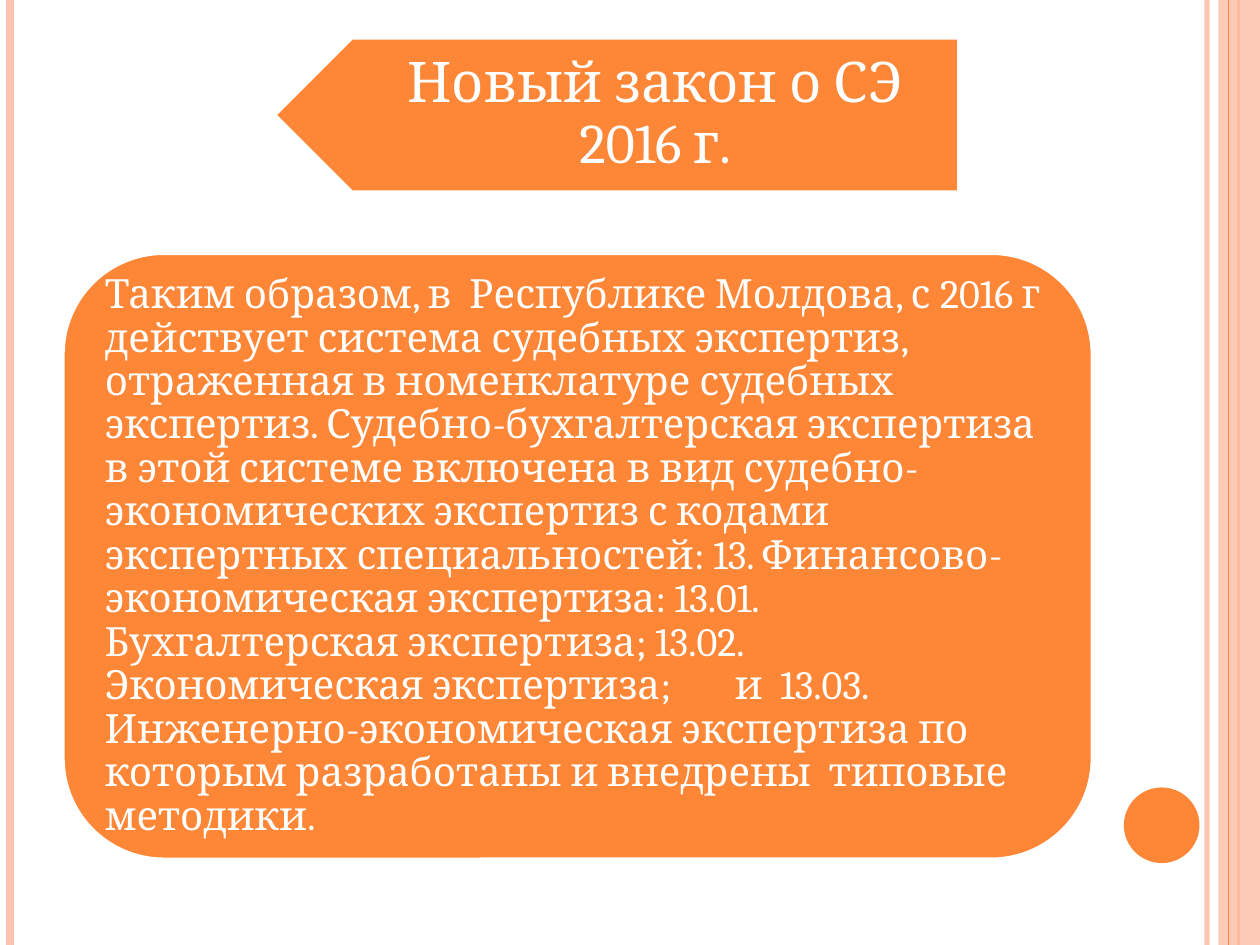
"""Build the slide on the 2016 forensic examination law."""
from dataclasses import dataclass
from typing import Any, Optional

from pptx import Presentation
from pptx import util as u
from pptx.dml import color
from pptx.enum import shapes, text
from pptx.oxml import ns, xmlchemy

WIDE, HIGH = u.Inches(10), u.Inches(7.5)
COLS, ROWS = 100, 75


@dataclass(frozen=True)
class Theme:
    """Colours, font and type sizes."""
    main: str = "FE8637"
    pale: str = "FEC3AE"
    white: str = "FFFFFF"
    font: str = "Cambria"
    head: float = 32
    body: float = 23


@dataclass(frozen=True)
class Box:
    """An area in grid columns and rows."""
    col: float
    row: float
    wide: float
    high: float

    def place(self) -> tuple[int, ...]:
        """Return the area in slide units."""
        return (across(self.col), down(self.row),
                across(self.wide), down(self.high))


@dataclass(frozen=True)
class Rule:
    """A full-height line."""
    col: float
    tone: str
    width: float
    alpha: int = 100


@dataclass(frozen=True)
class Form:
    """A filled preset shape."""
    kind: Any
    box: Box
    tone: str
    edge: Optional[str] = None
    turn: float = 0
    alpha: int = 100


@dataclass(frozen=True)
class Copy:
    """A paragraph with its size, alignment and insets in inches."""
    words: str
    size: float
    align: Any
    sides: tuple[float, float, float, float]


LOOK = Theme()
UNDER = (Rule(95.8, LOOK.pale, 3, 93), Rule(0.8, LOOK.pale, 4.5),
         Rule(98.3, LOOK.main, 1.5))
BAND = Form(shapes.MSO_SHAPE.RECTANGLE, Box(96.7, 0, 3.3, ROWS), LOOK.pale, alpha=87)
OVER = Rule(97.5, LOOK.main, 0.75)
DOT = Form(shapes.MSO_SHAPE.OVAL, Box(89.2, 62.5, 6, 6), LOOK.main)
ARROW = Form(shapes.MSO_SHAPE.PENTAGON, Box(21.8, 3, 54.3, 12.25), LOOK.main, LOOK.white, 180)
PANEL = Form(shapes.MSO_SHAPE.ROUNDED_RECTANGLE, Box(5, 20.1, 81.7, 48.1), LOOK.main, LOOK.white)
TITLE = Box(24.9, 3, 51.2, 12.25)
HEAD = Copy("Новый закон о СЭ 2016 г.", LOOK.head, text.PP_ALIGN.CENTER,
            (0.55, 0.13, 0.25, 0.13))
BODY = Copy(
    "Таким образом, в  Республике Молдова, с 2016 г действует система "
    "судебных экспертиз, отраженная в номенклатуре судебных экспертиз. "
    "Судебно-бухгалтерская экспертиза в этой системе включена в вид "
    "судебно-экономических экспертиз с кодами экспертных специальностей: "
    "13. Финансово-экономическая экспертиза: 13.01. Бухгалтерская экспертиза; "
    "13.02. Экономическая экспертиза; \tи  13.03. Инженерно-экономическая "
    "экспертиза по которым разработаны и внедрены  типовые методики.",
    LOOK.body, text.PP_ALIGN.LEFT, (0.1, 0.1, 0.1, 0.1))


def across(cols: float) -> int:
    """Turn columns into slide units."""
    return round(WIDE * cols / COLS)


def down(rows: float) -> int:
    """Turn rows into slide units."""
    return round(HIGH * rows / ROWS)


def apply(item: Any, vals: dict[str, Any]) -> None:
    """Set each named attribute."""
    for name, val in vals.items():
        setattr(item, name, val)


def tint(fill: Any, tone: str) -> None:
    """Make a fill solid in one colour."""
    fill.solid()
    fill.fore_color.rgb = color.RGBColor.from_string(tone)


def fade(item: Any, alpha: int) -> None:
    """Make the first colour of a shape partly transparent."""
    if alpha < 100:
        tone = next(item._element.spPr.iter(ns.qn("a:srgbClr")))
        mark = xmlchemy.OxmlElement("a:alpha")
        mark.set("val", str(alpha * 1000))
        tone.append(mark)


def draw_rule(slide: Any, rule: Rule) -> None:
    """Draw a full-height line."""
    left = across(rule.col)
    line = slide.shapes.add_connector(
        shapes.MSO_CONNECTOR.STRAIGHT, left, 0, left, HIGH)
    tint(line.line.fill, rule.tone)
    line.line.width = u.Pt(rule.width)
    fade(line, rule.alpha)
    line._element.spPr.append(xmlchemy.OxmlElement("a:effectLst"))


def draw_form(slide: Any, form: Form) -> Any:
    """Draw a filled shape and return it."""
    item = slide.shapes.add_shape(form.kind, *form.box.place())
    item.shadow.inherit = False
    item.rotation = form.turn
    tint(item.fill, form.tone)
    fade(item, form.alpha)
    if form.edge:
        tint(item.line.fill, form.edge)
        item.line.width = u.Pt(2)
    else:
        item.line.fill.background()
    return item


def write(item: Any, copy: Copy) -> None:
    """Put a paragraph in a shape."""
    frame = item.text_frame
    names = ("margin_left", "margin_top", "margin_right", "margin_bottom")
    apply(frame, dict(zip(names, map(u.Inches, copy.sides))))
    apply(frame, {"word_wrap": True, "vertical_anchor": text.MSO_ANCHOR.MIDDLE})
    para = frame.paragraphs[0]
    apply(para, {"alignment": copy.align, "line_spacing": 0.9})
    run = para.add_run()
    run.text = copy.words
    apply(run.font, {"name": LOOK.font, "size": u.Pt(copy.size)})
    tint(run.font.fill, LOOK.white)


def main() -> None:
    """Build and save the slide."""
    deck = Presentation()
    apply(deck, {"slide_width": WIDE, "slide_height": HIGH})
    slide = deck.slides.add_slide(deck.slide_layouts[6])
    for rule in UNDER:
        draw_rule(slide, rule)
    draw_form(slide, BAND)
    draw_rule(slide, OVER)
    for form in (DOT, ARROW):
        draw_form(slide, form)
    write(slide.shapes.add_textbox(*TITLE.place()), HEAD)
    write(draw_form(slide, PANEL), BODY)
    deck.save("out.pptx")


if __name__ == "__main__":
    main()
